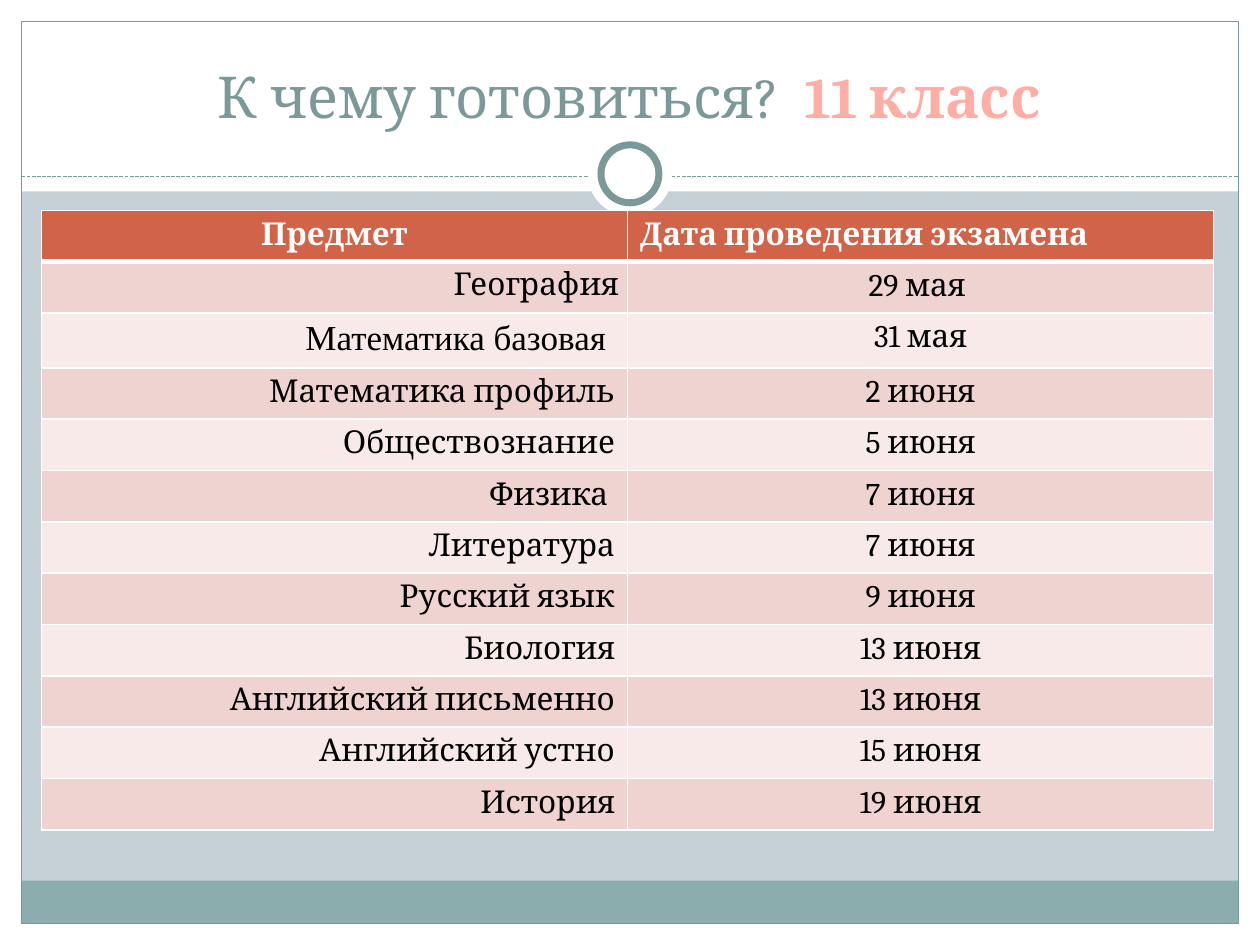
from lxml import etree
from pptx import Presentation
from pptx import util as u
from pptx.dml.color import RGBColor
from pptx.enum import dml, shapes, text
from pptx.oxml.ns import qn

COLORS = {
    "white": "FFFFFF", "black": "000000", "background": "C5D1D7",
    "teal": "7C999A", "footer": "8CADAE", "pink": "FFAEA5",
    "header": "D16349", "odd": "EED3D0", "even": "F7EAE9",
}
FONT = "Cambria"
HEADERS = ["Предмет", "Дата проведения экзамена"]
EXAMS = [
    ("География", "29 мая "),
    ("Математика базовая ", "31 мая"),
    ("Математика профиль", "2 июня"),
    ("Обществознание", "5 июня"),
    ("Физика ", "7 июня"),
    ("Литература", "7 июня"),
    ("Русский язык", "9 июня"),
    ("Биология", "13 июня"),
    ("Английский письменно", "13 июня"),
    ("Английский устно", "15 июня"),
    ("История", "19 июня"),
]
# Cells whose font differs from the rest of the table
SPECIAL_FONTS = {"Математика базовая ": {"size": 20, "font": "Times New Roman"}}

WIDTH, HEIGHT = 10, 7.5
MARGIN = 0.17
INNER_WIDTH, INNER_HEIGHT = WIDTH - 2 * MARGIN, HEIGHT - 2 * MARGIN
HEADER_HEIGHT, FOOTER_HEIGHT = 1.52, 0.34
RULE_TOP = 1.4
RING_CENTER = 1.38
TABLE_LEFT, TABLE_TOP, TABLE_WIDTH, TABLE_HEIGHT = 0.33, 1.67, 9.3, 4.89

RECTANGLE, OVAL = shapes.MSO_SHAPE.RECTANGLE, shapes.MSO_SHAPE.OVAL
LEFT, CENTER, RIGHT = text.PP_ALIGN.LEFT, text.PP_ALIGN.CENTER, text.PP_ALIGN.RIGHT


def color(name):
    return RGBColor.from_string(COLORS[name])


def add_shape(slide, kind, left, top, width, height, fill=None, line=None, line_width=0.75):
    shape = slide.shapes.add_shape(kind, *map(u.Inches, (left, top, width, height)))
    shape.shadow.inherit = False
    if fill:
        shape.fill.solid()
        shape.fill.fore_color.rgb = color(fill)
    else:
        shape.fill.background()
    if line:
        shape.line.color.rgb = color(line)
        shape.line.width = u.Pt(line_width)
    else:
        shape.line.fill.background()


def add_circle(slide, diameter, **style):
    add_shape(slide, OVAL, (WIDTH - diameter) / 2, RING_CENTER - diameter / 2,
              diameter, diameter, **style)


def write(paragraph, content, size=18, font=FONT, fill="black", bold=False, align=LEFT):
    paragraph.alignment = align
    run = paragraph.add_run()
    run.text = content
    run.font.size, run.font.name, run.font.bold = u.Pt(size), font, bold
    run.font.color.rgb = color(fill)


def set_borders(cell, **widths):
    """Draw white cell borders; widths in points, keyed L, R, T and B."""
    properties = cell._tc.get_or_add_tcPr()
    for side, width in widths.items():
        line = etree.SubElement(properties, qn(f"a:ln{side}"), w=str(u.Pt(width)))
        solid = etree.SubElement(line, qn("a:solidFill"))
        etree.SubElement(solid, qn("a:srgbClr"), val=COLORS["white"])


def add_frame(slide):
    right, bottom = WIDTH - MARGIN, HEIGHT - MARGIN
    for box in [(0, bottom, WIDTH, MARGIN), (0, 0, WIDTH, HEADER_HEIGHT),
                (0, 0, MARGIN, HEIGHT), (right, 0, MARGIN, HEIGHT)]:
        add_shape(slide, RECTANGLE, *box, fill="white")
    add_shape(slide, RECTANGLE, MARGIN, bottom - FOOTER_HEIGHT, INNER_WIDTH, FOOTER_HEIGHT,
              fill="footer")
    add_shape(slide, RECTANGLE, MARGIN, MARGIN, INNER_WIDTH, INNER_HEIGHT, line="teal")
    rule = slide.shapes.add_connector(
        shapes.MSO_CONNECTOR.STRAIGHT,
        *map(u.Inches, (MARGIN, RULE_TOP, right, RULE_TOP)))
    rule.line.color.rgb = color("teal")
    rule.line.width = u.Pt(0.75)
    rule.line.dash_style = dml.MSO_LINE.SQUARE_DOT
    etree.SubElement(rule._element.spPr, qn("a:effectLst"))
    add_circle(slide, 0.67, fill="white")
    add_circle(slide, 0.46, fill="white", line="teal", line_width=4)


def add_title(slide):
    box = slide.shapes.add_textbox(*map(u.Inches, (0.33, 0.25, 9.33, 0.83)))
    frame = box.text_frame
    frame.word_wrap = True
    frame.vertical_anchor = text.MSO_ANCHOR.BOTTOM
    paragraph = frame.paragraphs[0]
    write(paragraph, "К чему готовиться?  ", size=33, fill="teal", align=CENTER)
    write(paragraph, "11 класс", size=33, fill="pink", bold=True, align=CENTER)


def add_exam_table(slide):
    rows = [HEADERS, *EXAMS]
    table = slide.shapes.add_table(
        len(rows), len(HEADERS),
        *map(u.Inches, (TABLE_LEFT, TABLE_TOP, TABLE_WIDTH, TABLE_HEIGHT))).table
    for column in table.columns:
        column.width = u.Inches(TABLE_WIDTH / len(HEADERS))
    for row_index, values in enumerate(rows):
        table.rows[row_index].height = u.Inches(TABLE_HEIGHT / len(rows))
        for column_index, value in enumerate(values):
            cell = table.cell(row_index, column_index)
            set_borders(cell, L=1, R=1, T=3 if row_index == 1 else 1,
                        B=3 if row_index == 0 else 1)
            if row_index == 0:
                fill = "header"
                style = {"fill": "white", "bold": True, "align": (CENTER, LEFT)[column_index]}
            else:
                fill = "odd" if row_index % 2 else "even"
                style = {"align": (RIGHT, CENTER)[column_index],
                         **SPECIAL_FONTS.get(value, {})}
            cell.fill.solid()
            cell.fill.fore_color.rgb = color(fill)
            write(cell.text_frame.paragraphs[0], value, **style)
    first_subject = table.cell(1, 0)
    first_subject.margin_left = first_subject.margin_right = u.Inches(0.07)
    first_subject.margin_top = first_subject.margin_bottom = 0
    first_subject.text_frame.paragraphs[0].line_spacing = 1.15


def main():
    presentation = Presentation()
    presentation.slide_width, presentation.slide_height = u.Inches(WIDTH), u.Inches(HEIGHT)
    slide = presentation.slides.add_slide(presentation.slide_layouts[6])
    slide.background.fill.solid()
    slide.background.fill.fore_color.rgb = color("background")
    add_frame(slide)
    add_title(slide)
    add_exam_table(slide)
    presentation.save("out.pptx")


if __name__ == "__main__":
    main()
